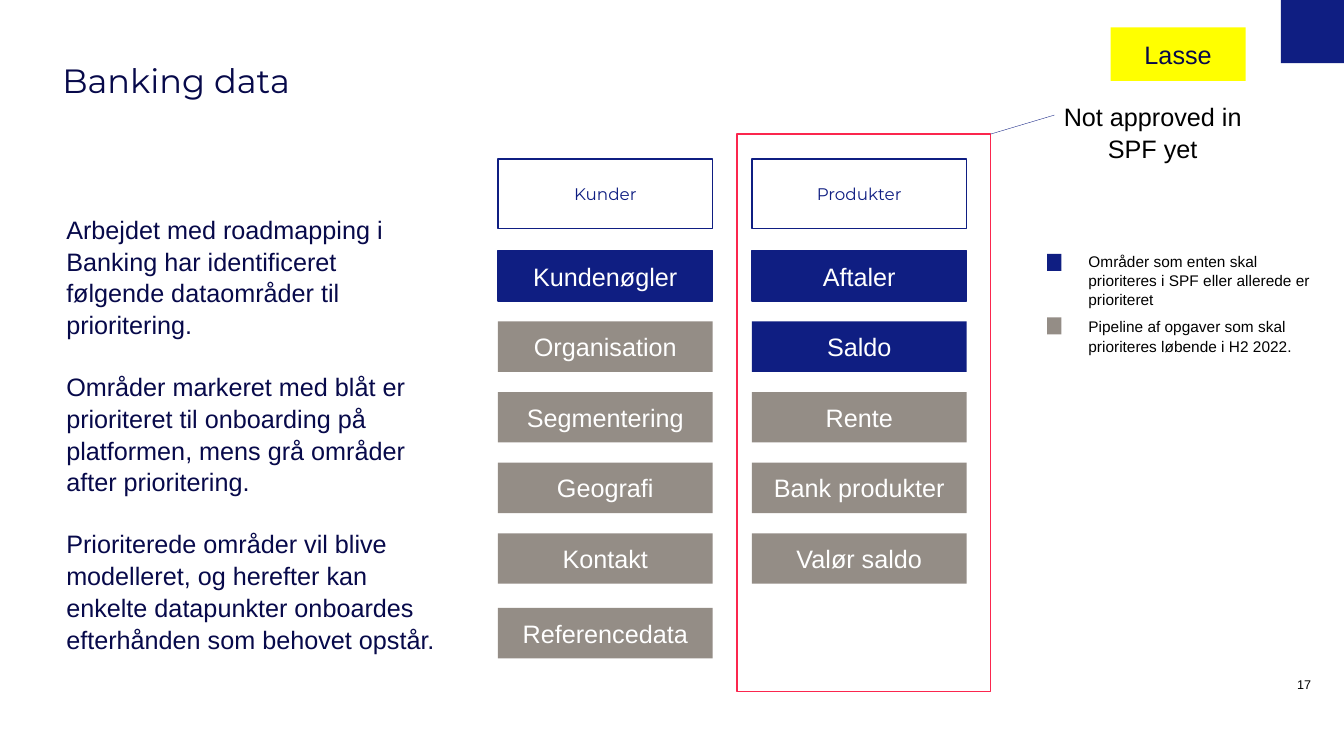
from lxml.etree import SubElement
from pptx import Presentation
from pptx.dml.color import RGBColor
from pptx.enum.shapes import MSO_CONNECTOR, MSO_SHAPE
from pptx.enum.text import MSO_ANCHOR, MSO_AUTO_SIZE, PP_ALIGN
from pptx.oxml.ns import qn
from pptx.util import Cm, Pt

BLUE = RGBColor(0x0F, 0x1E, 0x82)
NAVY = RGBColor(0x07, 0x09, 0x4A)
GREY = RGBColor(0x94, 0x8D, 0x86)
RED = RGBColor(0xFB, 0x26, 0x4E)
YELLOW = RGBColor(0xFF, 0xFF, 0x00)
WHITE = RGBColor(0xFF, 0xFF, 0xFF)
BLACK = RGBColor(0x00, 0x00, 0x00)

TITLE = "Banking data"
INTRODUCTION = [
    "Arbejdet med roadmapping i Banking har identificeret følgende dataområder til prioritering.",
    "Områder markeret med blåt er prioriteret til onboarding på platformen, mens grå områder after prioritering.",
    "Prioriterede områder vil blive modelleret, og herefter kan enkelte datapunkter onboardes efterhånden som behovet opstår.",
]
COLUMNS = [
    ("Kunder", 1, ["Kundenøgler", "Organisation", "Segmentering", "Geografi", "Kontakt", "Referencedata"]),
    ("Produkter", 2, ["Aftaler", "Saldo", "Rente", "Bank produkter", "Valør saldo"]),
]
LEGEND = [
    (BLUE, 6.4, 6.32, "Områder som enten skal prioriteres i SPF eller allerede er prioriteret"),
    (GREY, 8.0, 7.98, "Pipeline af opgaver som skal prioriteres løbende i H2 2022."),
]
NOTE = "Not approved in SPF yet"
OWNER = "Lasse"
PAGE_NUMBER = "17"

COLUMN_LEFT, COLUMN_PITCH, COLUMN_WIDTH = 12.55, 6.4, 5.41
HEADER_TOP, HEADER_HEIGHT = 4.01, 1.75
ROW_HEIGHT = 1.27
ROW_TOPS = [6.32 + 1.78 * row for row in range(5)] + [15.32]
FRAME_LEFT, FRAME_TOP, FRAME_WIDTH, FRAME_HEIGHT = 18.57, 3.38, 6.39, 14.05
LINE_SPACING = 1.05


def write(paragraph, text, size, color, align=PP_ALIGN.LEFT, font="Arial"):
    """Add one formatted run to a paragraph."""
    paragraph.alignment = align
    run = paragraph.add_run()
    run.text = text
    run.font.name = font
    run.font.size = Pt(size)
    run.font.color.rgb = color


def prepare_frame(text_frame, margin=0, anchor=MSO_ANCHOR.TOP):
    """Set wrapping, margins and anchor of a text frame."""
    text_frame.word_wrap = True
    text_frame.auto_size = MSO_AUTO_SIZE.NONE
    text_frame.vertical_anchor = anchor
    text_frame.margin_left = text_frame.margin_right = Cm(margin)
    text_frame.margin_top = text_frame.margin_bottom = Cm(margin)


def place(shape, left, top, width, height):
    """Move and size a placeholder, in centimetres."""
    shape.left, shape.top = Cm(left), Cm(top)
    shape.width, shape.height = Cm(width), Cm(height)


def add_box(slide, left, top, width, height, fill=None, line=None):
    """Add a flat rectangle."""
    box = slide.shapes.add_shape(MSO_SHAPE.RECTANGLE, Cm(left), Cm(top), Cm(width), Cm(height))
    box.shadow.inherit = False
    if fill is None:
        box.fill.background()
    else:
        box.fill.solid()
        box.fill.fore_color.rgb = fill
    if line is None:
        box.line.fill.background()
    else:
        box.line.color.rgb = line
        box.line.width = Pt(1)
    return box


def add_label(box, text, size, color, font="Arial"):
    """Centre a label in a rectangle."""
    prepare_frame(box.text_frame, 0.13, MSO_ANCHOR.MIDDLE)
    write(box.text_frame.paragraphs[0], text, size, color, PP_ALIGN.CENTER, font)


def add_text(slide, left, top, width, height, text, size, align=PP_ALIGN.LEFT, anchor=MSO_ANCHOR.TOP):
    """Add a black text box without margins."""
    box = slide.shapes.add_textbox(Cm(left), Cm(top), Cm(width), Cm(height))
    prepare_frame(box.text_frame, anchor=anchor)
    paragraph = box.text_frame.paragraphs[0]
    paragraph.line_spacing = LINE_SPACING
    write(paragraph, text, size, BLACK, align)


def add_introduction(body):
    """Fill the body placeholder with unbulleted paragraphs."""
    place(body, 1.57, 5.26, 9.55, 8.26)
    prepare_frame(body.text_frame, 0.1)
    for index, text in enumerate(INTRODUCTION):
        paragraph = body.text_frame.add_paragraph() if index else body.text_frame.paragraphs[0]
        properties = paragraph._p.get_or_add_pPr()
        properties.set("marL", "0")
        properties.set("indent", "0")
        SubElement(properties, qn("a:buNone"))
        paragraph.line_spacing = LINE_SPACING
        paragraph.space_before = Pt(21.6 if index else 0)
        write(paragraph, text, 18, NAVY)


def add_columns(slide):
    """Draw both columns, the leading areas in blue and the rest in grey."""
    for column, (header, prioritised, areas) in enumerate(COLUMNS):
        left = COLUMN_LEFT + column * COLUMN_PITCH
        box = add_box(slide, left, HEADER_TOP, COLUMN_WIDTH, HEADER_HEIGHT, line=BLUE)
        add_label(box, header, 12, BLUE, "Montserrat")
        for row, (area, top) in enumerate(zip(areas, ROW_TOPS)):
            fill = BLUE if row < prioritised else GREY
            box = add_box(slide, left, top, COLUMN_WIDTH, ROW_HEIGHT, fill, None if row else BLUE)
            add_label(box, area, 18, WHITE)


def add_callout(slide):
    """Frame the product column and connect it to its note."""
    add_box(slide, FRAME_LEFT, FRAME_TOP, FRAME_WIDTH, FRAME_HEIGHT, line=RED)
    leader = slide.shapes.add_connector(
        MSO_CONNECTOR.STRAIGHT, Cm(FRAME_LEFT + FRAME_WIDTH), Cm(FRAME_TOP), Cm(26.57), Cm(2.9))
    leader.line.color.rgb = BLUE
    leader.line.width = Pt(0.25)
    SubElement(leader._element.spPr, qn("a:effectLst"))
    add_text(slide, 26.75, 2.51, 4.6, 1.55, NOTE, 18, PP_ALIGN.CENTER)


def main():
    """Build the slide and save it."""
    presentation = Presentation()
    presentation.slide_width, presentation.slide_height = Cm(33.87), Cm(19.05)
    slide = presentation.slides.add_slide(presentation.slide_layouts[1])
    add_box(slide, 32.28, 0, 1.59, 1.59, BLUE)

    title = slide.shapes.title
    place(title, 1.57, 1.5, 29.11, 2.67)
    prepare_frame(title.text_frame)
    write(title.text_frame.paragraphs[0], TITLE, 24, NAVY, font="Montserrat")

    add_introduction(slide.placeholders[1])
    add_columns(slide)
    for color, marker_top, text_top, text in LEGEND:
        add_box(slide, 26.39, marker_top, 0.36, 0.43, color)
        add_text(slide, 27.43, text_top, 6.1, 0.94, text, 11)
    add_callout(slide)
    add_label(add_box(slide, 27.99, 0.69, 3.4, 1.35, YELLOW), OWNER, 18, NAVY)
    add_text(slide, 32.28, 16.94, 0.76, 0.51, PAGE_NUMBER, 9, PP_ALIGN.RIGHT, MSO_ANCHOR.BOTTOM)
    presentation.save("out.pptx")


if __name__ == "__main__":
    main()
